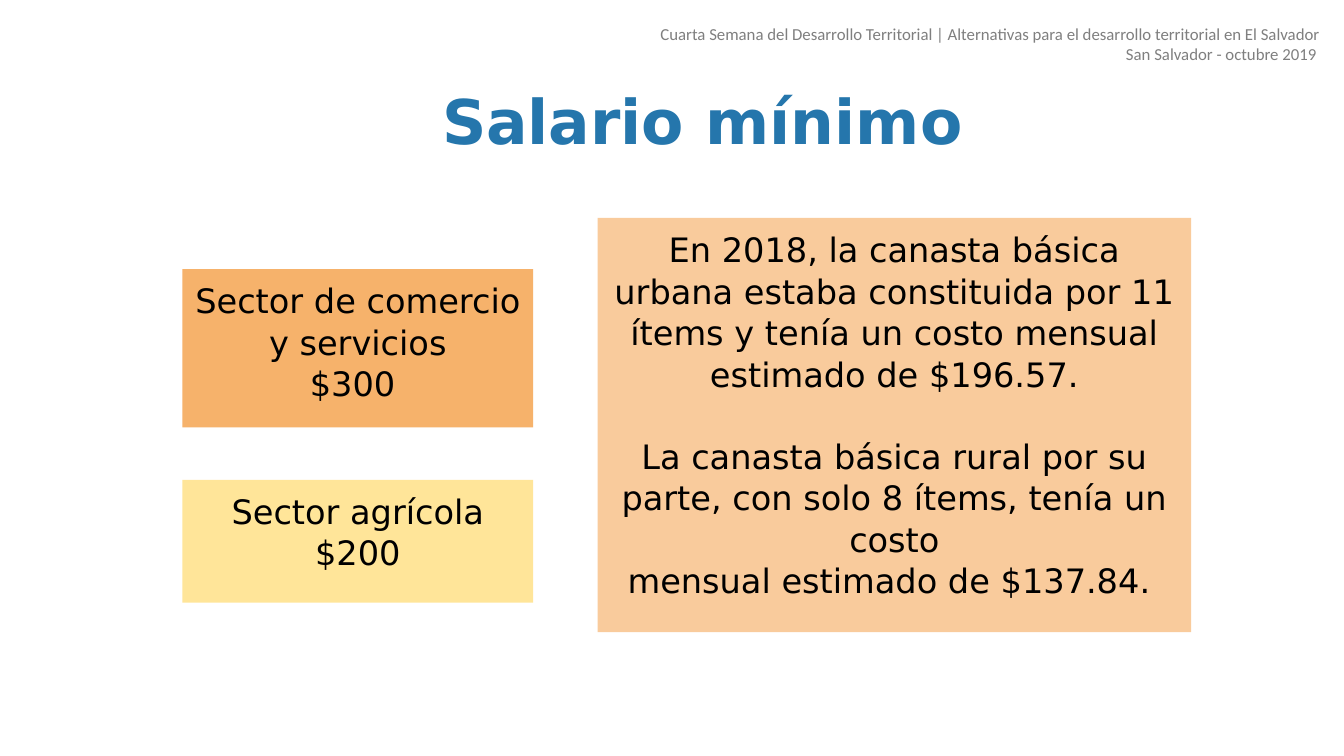
from pptx import Presentation
from pptx import util as u
from pptx.dml import color
from pptx.enum import shapes, text

HUES = {
    "title": "2576AC",
    "head": "7F7F7F",
    "ink": "000000",
    "peach": "F9CB9C",
    "orange": "F6B26B",
    "yellow": "FFE599",
}
SANS = "DejaVu Sans"


def hue(name):
    return color.RGBColor.from_string(HUES[name])


def place(shape, left, top, width, height):
    shape.left, shape.top = u.Cm(left), u.Cm(top)
    shape.width, shape.height = u.Cm(width), u.Cm(height)


def write(shape, lines, size=24, font=SANS, tint="ink", bold=False,
          align=text.PP_ALIGN.CENTER, pitch=1.03, inset=0.25, gaps=None):
    frame = shape.text_frame
    frame.word_wrap = True
    frame.auto_size = text.MSO_AUTO_SIZE.NONE
    frame.vertical_anchor = text.MSO_ANCHOR.TOP
    frame.margin_left = frame.margin_right = u.Cm(0.25)
    frame.margin_top = frame.margin_bottom = u.Cm(inset)
    for i, line in enumerate(lines):
        para = frame.paragraphs[0] if i == 0 else frame.add_paragraph()
        para.alignment = align
        para.line_spacing = pitch
        para.space_before = u.Pt((gaps or {}).get(i, 0))
        run = para.add_run()
        run.text = line
        run.font.size = u.Pt(size)
        run.font.name = font
        run.font.bold = bold
        run.font.color.rgb = hue(tint)


def add_head(slide, lines):
    box = slide.shapes.add_textbox(
        u.Cm(7.98), u.Cm(0.46), u.Cm(25.55), u.Cm(1.27))
    write(box, lines, size=12, font="Calibri", tint="head",
          align=text.PP_ALIGN.RIGHT, pitch=1.0, inset=0.13)


def add_title(slide, title):
    shape = slide.shapes.title
    place(shape, 3.1, 2.18, 29.21, 3.3)
    write(shape, [title], size=44, tint="title", bold=True,
          pitch=0.9, inset=0.13)


def add_card(slide, spot, fill, lines, gaps=None):
    card = slide.shapes.add_shape(
        shapes.MSO_SHAPE.RECTANGLE, *[u.Cm(n) for n in spot])
    card.shadow.inherit = False
    card.fill.solid()
    card.fill.fore_color.rgb = hue(fill)
    card.line.fill.background()
    write(card, lines, gaps=gaps)


def main():
    deck = Presentation()
    deck.slide_width, deck.slide_height = u.Cm(33.87), u.Cm(19.05)
    slide = deck.slides.add_slide(deck.slide_layouts[5])
    add_head(slide, [
        "Cuarta Semana del Desarrollo Territorial | "
        "Alternativas para el desarrollo territorial en El Salvador",
        "San Salvador - octubre 2019 ",
    ])
    add_title(slide, "Salario mínimo")
    add_card(slide, (15.06, 5.49, 14.96, 10.44), "peach", [
        "En 2018, la canasta básica urbana estaba constituida por 11 "
        "ítems y tenía un costo mensual",
        "estimado de $196.57.",
        "La canasta básica rural por su parte, con solo 8 ítems, "
        "tenía un costo",
        "mensual estimado de $137.84. ",
    ], gaps={2: 29})
    add_card(slide, (4.6, 6.78, 8.84, 3.99), "orange",
             ["Sector de comercio y servicios", "$300 "])
    add_card(slide, (4.6, 12.09, 8.84, 3.1), "yellow",
             ["Sector agrícola", "$200"])
    deck.save("out.pptx")


if __name__ == "__main__":
    main()
